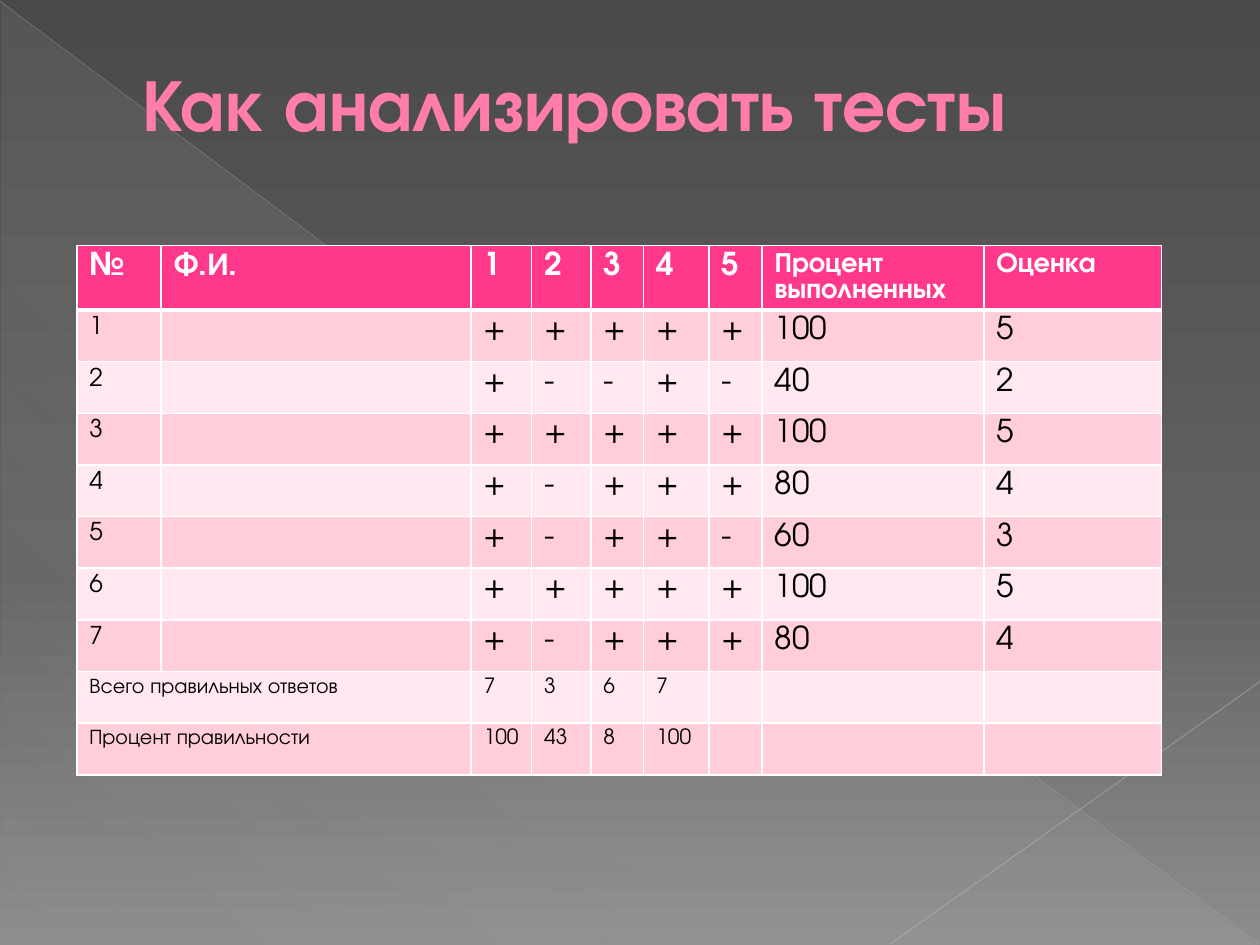
from pptx import Presentation
from pptx.dml.color import RGBColor
from pptx.enum.shapes import MSO_CONNECTOR, MSO_SHAPE
from pptx.enum.text import MSO_ANCHOR, PP_ALIGN
from pptx.oxml.ns import qn
from pptx.util import Inches, Pt
from lxml import etree

FONT = "TeX Gyre Adventor"
STRAIGHT = MSO_CONNECTOR.STRAIGHT
TRIANGLE = MSO_SHAPE.RIGHT_TRIANGLE
MIDDLE, LEFT = MSO_ANCHOR.MIDDLE, PP_ALIGN.LEFT

TITLE = "Как анализировать тесты"
HEADER = ["№", "Ф.И.", "1", "2", "3", "4", "5", "Процент выполненных", "Оценка"]
RESULTS = [("+++++", "100", "5"), ("+--+-", "40", "2"), ("+++++", "100", "5"),
           ("+-+++", "80", "4"), ("+-++-", "60", "3"), ("+++++", "100", "5"),
           ("+-+++", "80", "4")]
TOTALS = [["Всего правильных ответов", "", "7", "3", "6", "7", "", "", ""],
          ["Процент правильности", "", "100", "43", "8", "100", "", "", ""]]
COL_WIDTHS = [0.67, 2.46, 0.48, 0.47, 0.42, 0.52, 0.42, 1.76, 1.41]
HEADER_HEIGHT, ROW_HEIGHT = 0.5, 0.41
HEADER_FILL, BANDS = "FF388C", ("FFCEDA", "FFE8EE")
BACKGROUND = [(0, "4A4A4A", 100), (60, "626262", 100), (100, "8C8C8C", 100)]
SHEEN = [(0, "D2D2D2", 10), (70, "D2D2D2", 8), (100, "D2D2D2", 1)]
RAYS = [((0, 0.01), (9.99, 7.49), "BFBFBF", 0.39, 35),
        ((10, 5.41), (7.07, 7.49), "C6C6C6", 0.47, 45)]


def rgb(value):
    return RGBColor.from_string(value)


def add_color(parent, value, opacity=100):
    clr = etree.SubElement(parent, qn("a:srgbClr"), val=value)
    if opacity < 100:
        etree.SubElement(clr, qn("a:alpha"), val=str(opacity * 1000))


def set_gradient(fill, stops, angle):
    fill.gradient()
    fill.gradient_angle = 360 - angle
    gs_lst = fill._fill._gradFill.find(qn("a:gsLst"))
    for gs in list(gs_lst):
        gs_lst.remove(gs)
    for pos, value, opacity in stops:
        gs = etree.SubElement(gs_lst, qn("a:gs"), pos=str(pos * 1000))
        add_color(gs, value, opacity)


def add_ray(s, start, end, color, width, opacity):
    ray = s.shapes.add_connector(STRAIGHT, *map(Inches, start + end))
    ray.line.width = Pt(width)
    ray.line.color.rgb = rgb(color)
    clr = ray.line._ln.find(".//" + qn("a:srgbClr"))
    etree.SubElement(clr, qn("a:alpha"), val=str(opacity * 1000))
    etree.SubElement(ray._element.spPr, qn("a:effectLst"))


def add_run(p, text, size, color, bold=False):
    r = p.add_run()
    r.text = text
    r.font.name, r.font.size, r.font.bold = FONT, Pt(size), bold
    r.font.color.rgb = rgb(color)
    return r


def set_borders(cell, top, bottom):
    tc_pr = cell._tc.get_or_add_tcPr()
    for i, (side, width) in enumerate([("L", 1), ("R", 1), ("T", top), ("B", bottom)]):
        ln = etree.Element(qn(f"a:ln{side}"), w=str(Pt(width)))
        add_color(etree.SubElement(ln, qn("a:solidFill")), "FFFFFF")
        tc_pr.insert(i, ln)


def add_title(s):
    title = s.shapes.title
    s.shapes._spTree.append(title._element)
    title.left, title.top, title.width, title.height = map(Inches, (0.5, 0.29, 9, 1.04))
    tf = title.text_frame
    tf.word_wrap, tf.vertical_anchor = True, MIDDLE
    p = tf.paragraphs[0]
    p.alignment = LEFT
    p._p.get_or_add_pPr().set("marL", str(Inches(0.53)))
    r = add_run(p, TITLE, 42, "FF7DA7", True)
    ln = etree.Element(qn("a:ln"), w=str(Pt(0.5)))
    add_color(etree.SubElement(ln, qn("a:solidFill")), "B12761")
    r.font._element.insert(0, ln)


def text_size(row, col, first_total):
    if row >= first_total:
        return 12
    if row == 0:
        return 16 if col > 6 else 18
    return 14 if col == 0 else 18


def add_results(s):
    rows = [HEADER]
    rows += [[str(n), "", *marks, percent, grade]
             for n, (marks, percent, grade) in enumerate(RESULTS, 1)]
    first_total = len(rows)
    rows += TOTALS
    heights = [HEADER_HEIGHT] + [ROW_HEIGHT] * (len(rows) - 1)
    table = s.shapes.add_table(len(rows), len(HEADER), Inches(0.61), Inches(1.95),
                               Inches(sum(COL_WIDTHS)), Inches(sum(heights))).table
    for column, width in zip(table.columns, COL_WIDTHS):
        column.width = Inches(width)
    for i, values in enumerate(rows):
        table.rows[i].height = Inches(heights[i])
        for j, text in enumerate(values):
            cell = table.cell(i, j)
            cell.fill.solid()
            cell.fill.fore_color.rgb = rgb(BANDS[(i - 1) % 2] if i else HEADER_FILL)
            set_borders(cell, 3 if i == 1 else 1, 3 if i == 0 else 1)
            if text:
                add_run(cell.text_frame.paragraphs[0], text, text_size(i, j, first_total),
                        "000000" if i else "FFFFFF", i == 0)
        if i >= first_total:
            table.cell(i, 0).merge(table.cell(i, 1))


def main():
    """Build the slide on analysing test results."""
    prs = Presentation()
    prs.slide_width, prs.slide_height = Inches(10), Inches(7.5)
    s = prs.slides.add_slide(prs.slide_layouts[5])
    set_gradient(s.background.fill, BACKGROUND, 90)
    sheen = s.shapes.add_shape(TRIANGLE, *map(Inches, (0.01, 0.02, 9.98, 7.48)))
    sheen.shadow.inherit = False
    sheen.line.fill.background()
    set_gradient(sheen.fill, SHEEN, 133)
    for ray in RAYS:
        add_ray(s, *ray)
    add_title(s)
    add_results(s)
    prs.save("out.pptx")


if __name__ == "__main__":
    main()
